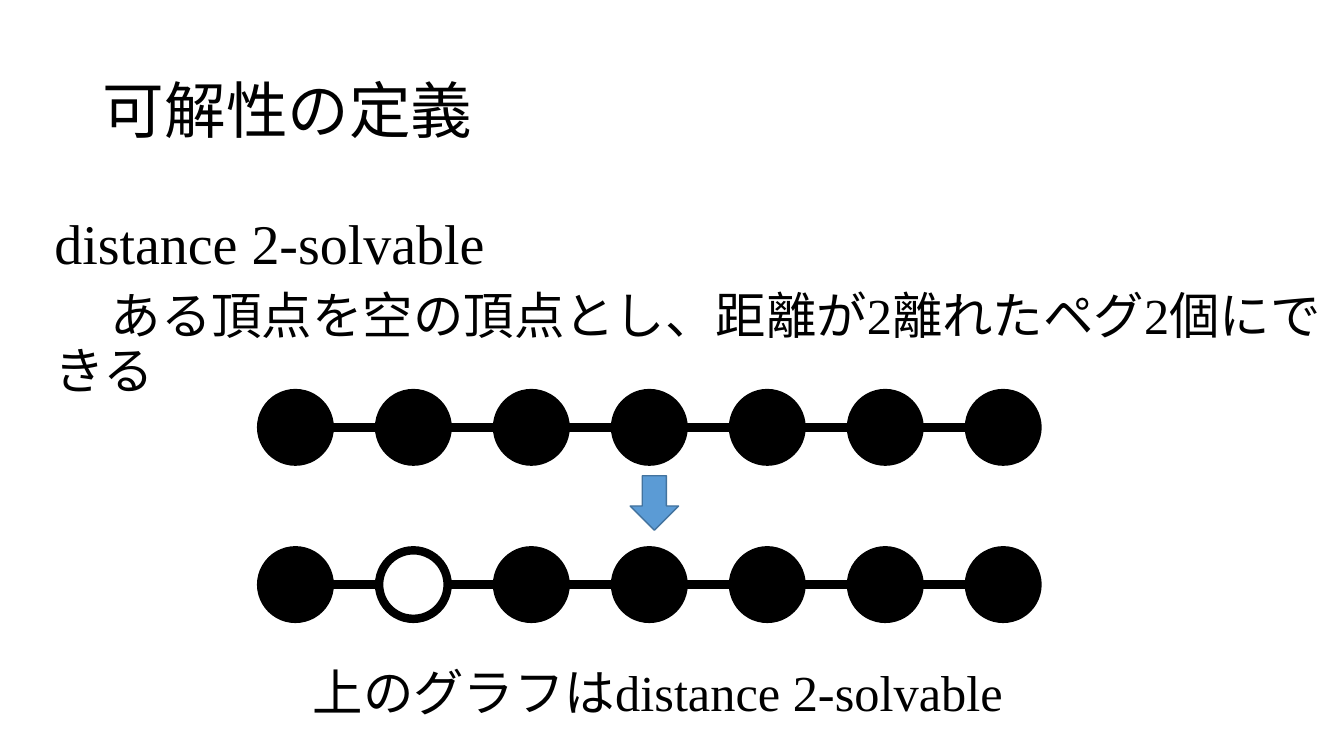
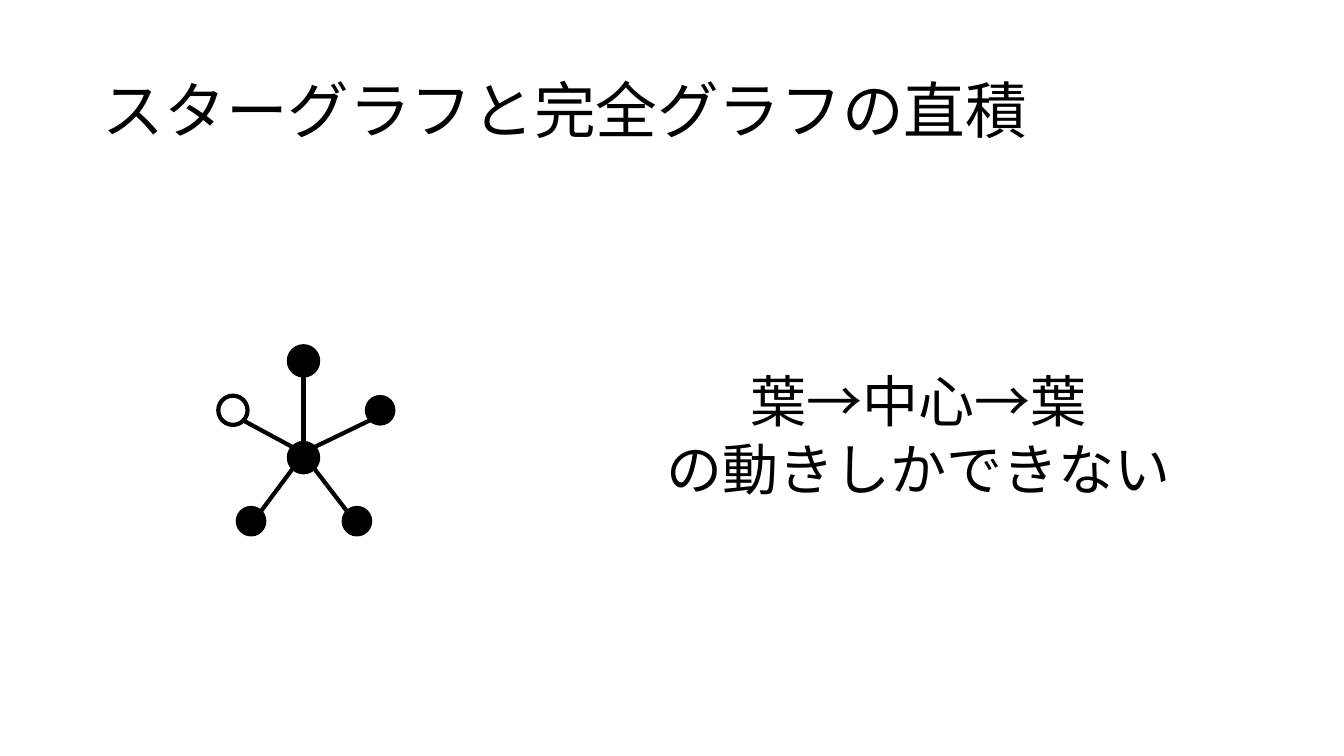
from dataclasses import dataclass

from lxml.etree import SubElement
from pptx import Presentation
from pptx.dml.color import RGBColor
from pptx.enum.shapes import MSO_CONNECTOR, MSO_SHAPE
from pptx.enum.text import MSO_ANCHOR, PP_ALIGN
from pptx.oxml.ns import qn
from pptx.presentation import Presentation as Deck
from pptx.shapes.base import BaseShape
from pptx.slide import Slide
from pptx.text.text import TextFrame
from pptx.util import Inches, Pt

BLACK = RGBColor(0x00, 0x00, 0x00)
WHITE = RGBColor(0xFF, 0xFF, 0xFF)
BLUE = RGBColor(0x5B, 0x9B, 0xD5)
NAVY = RGBColor(0x43, 0x73, 0x9E)

SANS = "Calibri"
SERIF = "Times New Roman"
TITLE_ONLY = 5


@dataclass(frozen=True)
class Span:
    text: str
    size: int
    font: str = SANS


@dataclass(frozen=True)
class Line:
    spans: tuple[Span, ...]
    align: PP_ALIGN = PP_ALIGN.CENTER
    spacing: float = 1.0
    before: int = 0
    indent: float = 0


@dataclass(frozen=True)
class Node:
    """A graph vertex, placed by its centre; a vertex without a peg is hollow."""
    x: float
    y: float
    size: float
    border: float
    peg: bool = True


def write(frame: TextFrame, lines: list[Line]) -> None:
    frame.word_wrap = True
    for index, line in enumerate(lines):
        para = frame.add_paragraph() if index else frame.paragraphs[0]
        para.alignment = line.align
        para.line_spacing = line.spacing
        para.space_before = Pt(line.before)
        if line.indent:
            para._p.get_or_add_pPr().set("indent", str(Inches(line.indent)))
        for span in line.spans:
            run = para.add_run()
            run.text = span.text
            run.font.size = Pt(span.size)
            run.font.name = span.font
            run.font.color.rgb = BLACK


def place(shape: BaseShape, left: float, top: float, width: float, height: float) -> None:
    shape.left, shape.top = Inches(left), Inches(top)
    shape.width, shape.height = Inches(width), Inches(height)


def add_page(deck: Deck, title: str) -> Slide:
    slide = deck.slides.add_slide(deck.slide_layouts[TITLE_ONLY])
    holder = slide.shapes.title
    place(holder, 0.92, 0.4, 11.5, 1.45)
    holder.text_frame.vertical_anchor = MSO_ANCHOR.MIDDLE
    write(holder.text_frame, [Line((Span(title, 44),), PP_ALIGN.LEFT, 0.9)])
    return slide


def add_text(slide: Slide, left: float, top: float, width: float, height: float,
             lines: list[Line]) -> None:
    box = slide.shapes.add_textbox(
        Inches(left), Inches(top), Inches(width), Inches(height))
    write(box.text_frame, lines)


def add_form(slide: Slide, kind: MSO_SHAPE, left: float, top: float, width: float,
             height: float, fill: RGBColor, line: RGBColor, border: float) -> None:
    shape = slide.shapes.add_shape(
        kind, Inches(left), Inches(top), Inches(width), Inches(height))
    shape.shadow.inherit = False
    shape.fill.solid()
    shape.fill.fore_color.rgb = fill
    shape.line.color.rgb = line
    shape.line.width = Pt(border)


def add_node(slide: Slide, node: Node) -> None:
    half = node.size / 2
    add_form(slide, MSO_SHAPE.OVAL, node.x - half, node.y - half, node.size, node.size,
             BLACK if node.peg else WHITE, BLACK, node.border)


def add_edge(slide: Slide, x1: float, y1: float, x2: float, y2: float,
             width: float) -> None:
    edge = slide.shapes.add_connector(
        MSO_CONNECTOR.STRAIGHT, Inches(x1), Inches(y1), Inches(x2), Inches(y2))
    edge.line.color.rgb = BLACK
    edge.line.width = Pt(width)
    SubElement(edge._element.spPr, qn("a:effectLst"))


def add_chain(slide: Slide, y: float, pegs: list[bool]) -> None:
    first, pitch = 2.93, 1.17
    nodes = [Node(first + i * pitch, y, 0.68, 6, peg) for i, peg in enumerate(pegs)]
    add_edge(slide, nodes[0].x, y, nodes[-1].x, y, 6)
    for node in nodes:
        add_node(slide, node)


def add_star(slide: Slide, hub: Node, leaves: list[Node]) -> None:
    """Join hub and leaves at the diagonal points of their outlines."""
    reach = 0.1
    for leaf in leaves:
        dx = reach * ((leaf.x > hub.x) - (leaf.x < hub.x))
        dy = reach * ((leaf.y > hub.y) - (leaf.y < hub.y))
        add_edge(slide, hub.x + dx, hub.y + dy, leaf.x - dx, leaf.y - dy, 3)
    for node in [hub, *leaves]:
        add_node(slide, node)


def draw_rule(deck: Deck) -> None:
    slide = add_page(deck, "可解性の定義")
    add_text(slide, 0.44, 2.1, 12.89, 2.56, [
        Line((Span("distance 2-solvable", 40, SERIF),), PP_ALIGN.LEFT, 0.9, 10),
        Line((Span("ある頂点を空の頂点とし、距離が2離れたペグ2個にできる", 36, SERIF),),
             PP_ALIGN.LEFT, 0.9, 10, 0.56),
    ])
    add_chain(slide, 4.24, [True] * 7)
    add_form(slide, MSO_SHAPE.DOWN_ARROW, 6.25, 4.72, 0.48, 0.54, BLUE, NAVY, 1)
    add_chain(slide, 5.8, [True, False] + [True] * 5)
    add_text(slide, 1.5, 6.51, 10.05, 0.71, [
        Line((Span("上のグラフは", 36), Span("distance 2-solvable", 36, SERIF))),
    ])


def draw_star(deck: Deck) -> None:
    slide = add_page(deck, "スターグラフと完全グラフの直積")
    size = 0.29
    add_star(slide, Node(3.01, 4.54, size, 3), [
        Node(3.01, 3.58, size, 3),
        Node(3.77, 4.07, size, 1),
        Node(3.54, 5.17, size, 1),
        Node(2.49, 5.17, size, 1),
        Node(2.31, 4.07, size, 3, False),
    ])
    add_text(slide, 5.92, 3.59, 6.38, 1.45, [
        Line((Span(text, 40),)) for text in ("葉→中心→葉", "の動きしかできない")
    ])


def main() -> None:
    deck = Presentation()
    deck.slide_width, deck.slide_height = Inches(13.33), Inches(7.5)
    draw_rule(deck)
    draw_star(deck)
    deck.save("out.pptx")


if __name__ == "__main__":
    main()
